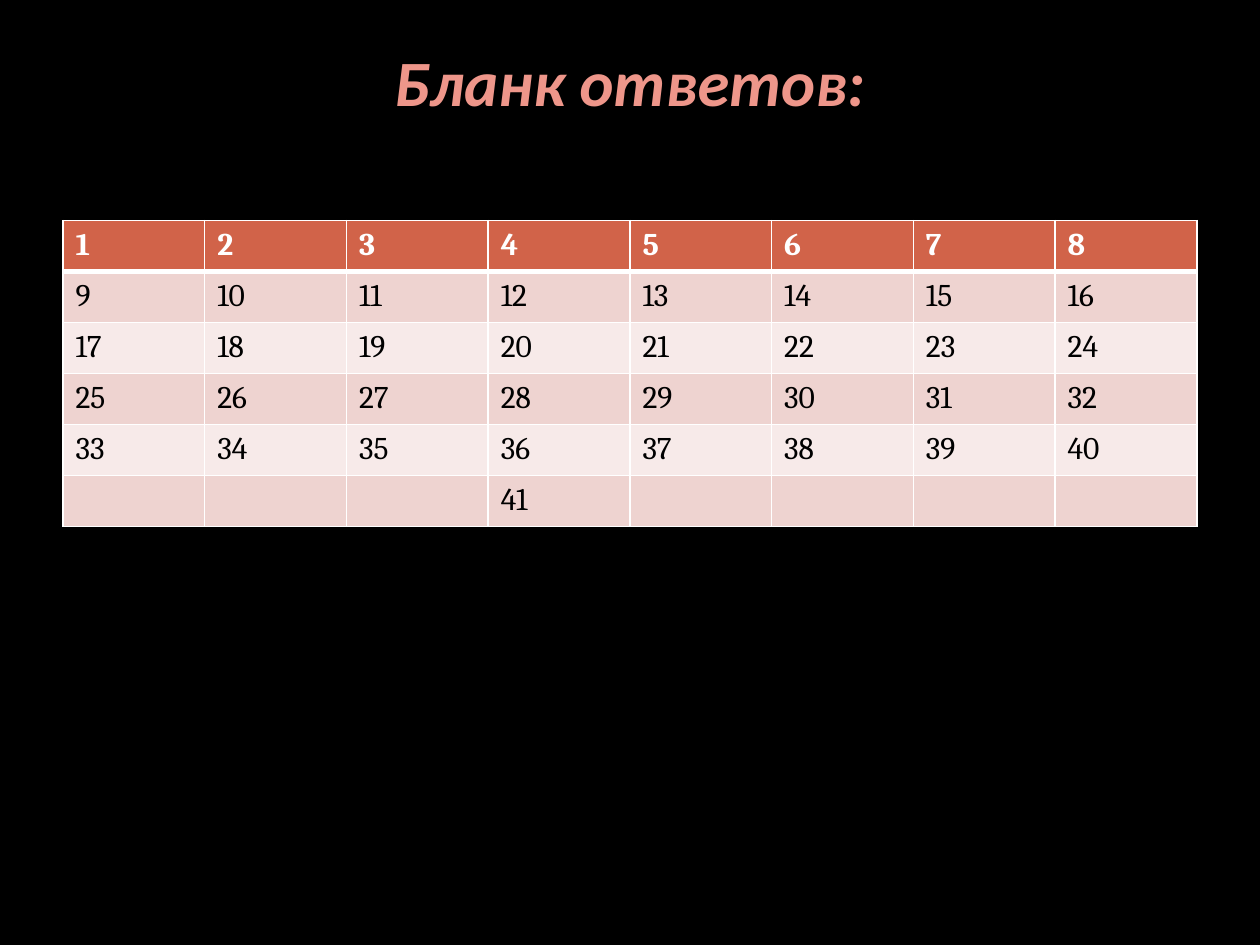
"""Build the answer sheet slide: a title over a numbered grid."""
from pptx import Presentation
from pptx import util as u
from pptx.dml.color import RGBColor
from pptx.enum import text
from pptx.oxml import parse_xml
from pptx.oxml.ns import nsdecls

HEADING = "Бланк ответов:"
COLUMNS = 8
ANSWERS = [[str(start + i) for i in range(COLUMNS)] for start in range(1, 41, COLUMNS)]
ANSWERS.append(["", "", "", "41", "", "", "", ""])
HEADER_FILL, BAND_FILLS = "D16349", ("F7EAE9", "EED3D0")
MARGIN, GRID_TOP, ROW_HEIGHT = 0.5, 1.75, 0.405
THIN, THICK = 1, 3


def color(value):
    """Turn a hex string into a colour."""
    return RGBColor.from_string(value)


def write(paragraph, words, font, size, ink, bold=False, italic=False):
    """Add one formatted run."""
    run = paragraph.add_run()
    run.text = words
    run.font.name, run.font.size = font, u.Pt(size)
    run.font.bold, run.font.italic = bold, italic
    run.font.color.rgb = color(ink)


def set_borders(cell, top, bottom):
    """Draw white borders around a cell, with widths in points."""
    properties = cell._tc.get_or_add_tcPr()
    sides = {"lnL": THIN, "lnR": THIN, "lnT": top, "lnB": bottom}
    for position, (side, width) in enumerate(sides.items()):
        properties.insert(position, parse_xml(
            f'<a:{side} {nsdecls("a")} w="{u.Pt(width)}"><a:solidFill>'
            f'<a:srgbClr val="FFFFFF"/></a:solidFill></a:{side}>'))


def add_heading(slide, width):
    """Place the heading in the title placeholder."""
    heading = slide.shapes.title
    heading.left, heading.top = u.Inches(MARGIN), u.Inches(0.3)
    heading.width, heading.height = u.Inches(width), u.Inches(1.25)
    frame = heading.text_frame
    frame.vertical_anchor = text.MSO_ANCHOR.TOP
    frame.margin_top = u.Inches(0.03)
    frame.paragraphs[0].alignment = text.PP_ALIGN.CENTER
    write(frame.paragraphs[0], HEADING, "Calibri", 36.9, "EE968A", True, True)


def add_answers(slide, width):
    """Add the banded answer grid."""
    grid = slide.shapes.add_table(
        len(ANSWERS), COLUMNS, u.Inches(MARGIN), u.Inches(GRID_TOP),
        u.Inches(width), u.Inches(ROW_HEIGHT * len(ANSWERS))).table
    for r, answers in enumerate(ANSWERS):
        header = r == 0
        for c, answer in enumerate(answers):
            cell = grid.cell(r, c)
            cell.fill.solid()
            cell.fill.fore_color.rgb = color(HEADER_FILL if header else BAND_FILLS[r % 2])
            set_borders(cell, THICK if r == 1 else THIN, THICK if header else THIN)
            if answer:
                write(cell.text_frame.paragraphs[0], answer, "Cambria", 18,
                      "FFFFFF" if header else "000000", header)


def main():
    """Build and save the slide."""
    deck = Presentation()
    deck.slide_width, deck.slide_height = u.Inches(10), u.Inches(7.5)
    slide = deck.slides.add_slide(deck.slide_layouts[5])
    slide.background.fill.solid()
    slide.background.fill.fore_color.rgb = color("000000")
    width = deck.slide_width.inches - 2 * MARGIN
    add_heading(slide, width)
    add_answers(slide, width)
    deck.save("out.pptx")


if __name__ == "__main__":
    main()
